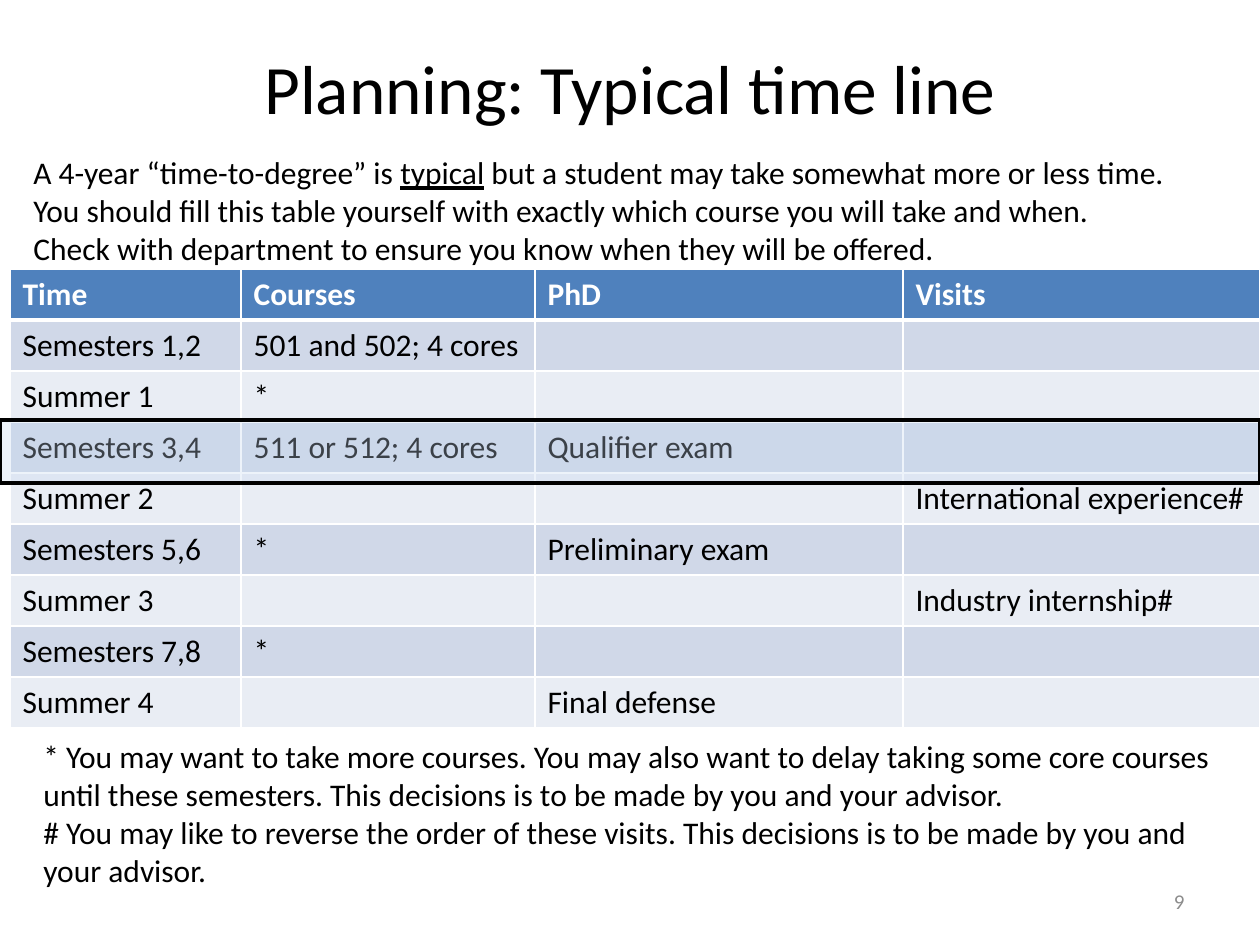
"""Build the slide with the typical time line of a doctorate."""
from dataclasses import dataclass

from lxml.etree import SubElement
from pptx import Presentation
from pptx.dml.color import RGBColor as Rgb
from pptx.enum.shapes import MSO_SHAPE as Shape
from pptx.enum.text import MSO_ANCHOR as Anchor, PP_ALIGN as Align
from pptx.oxml.ns import qn
from pptx.util import Emu, Pt

EMU_PER_PX = 914400 / 126


@dataclass(frozen=True)
class Theme:
    font: str = "Calibri"
    title_size: float = 39.6
    body_size: int = 18
    number_size: int = 12
    text: str = "000000"
    muted: str = "8C8C8C"
    white: str = "FFFFFF"
    header: str = "4F81BD"
    bands: tuple = ("D0D8E8", "E9EDF4")
    highlight: str = "C6D9F1"
    highlight_opacity: int = 30


THEME = Theme()

COLUMN_WIDTHS = (231, 294, 368, 357)
ROW_HEIGHT = 51
ROWS = (
    ("Time", "Courses", "PhD", "Visits"),
    ("Semesters 1,2", "501 and 502; 4 cores", "", ""),
    ("Summer 1", "*", "", ""),
    ("Semesters 3,4", "511 or 512; 4 cores", "Qualifier exam", ""),
    ("Summer 2", "", "", "International experience#"),
    ("Semesters 5,6", "*", "Preliminary exam", ""),
    ("Summer 3", "", "", "Industry internship#"),
    ("Semesters 7,8", "*", "", ""),
    ("Summer 4", "", "Final defense", ""),
)
INTRO = (
    ("A 4-year “time-to-degree” is ", "typical",
     " but a student may take somewhat more or less time."),
    ("You should fill this table yourself with exactly which course you will take and when.",),
    ("Check with department to ensure you know when they will be offered.",),
)
NOTES = (
    ("* You may want to take more courses. You may also want to delay taking some core "
     "courses until these semesters. This decisions is to be made by you and your advisor.",),
    ("# You may like to reverse the order of these visits. This decisions is to be made "
     "by you and your advisor.",),
)


def px(length):
    return Emu(round(length * EMU_PER_PX))


def style(paragraph, size, color=THEME.text, align=Align.LEFT, bold=False):
    font = paragraph.font
    font.name, font.size, font.bold = THEME.font, Pt(size), bold
    font.color.rgb = Rgb.from_string(color)
    paragraph.alignment = align


def add_title(slide, text, left, top, width, height):
    title = slide.shapes.title
    title.left, title.top, title.width, title.height = map(px, (left, top, width, height))
    title.text_frame.text = text
    title.text_frame.vertical_anchor = Anchor.MIDDLE
    style(title.text_frame.paragraphs[0], THEME.title_size, align=Align.CENTER)


def add_text(slide, paragraphs, box, size=THEME.body_size, color=THEME.text,
             align=Align.LEFT, anchor=Anchor.TOP):
    """Add a text box; every second run of a paragraph is underlined."""
    frame = slide.shapes.add_textbox(*map(px, box)).text_frame
    frame.word_wrap = True
    frame.vertical_anchor = anchor
    for index, runs in enumerate(paragraphs):
        paragraph = frame.add_paragraph() if index else frame.paragraphs[0]
        style(paragraph, size, color, align)
        for position, text in enumerate(runs):
            run = paragraph.add_run()
            run.text = text
            if position % 2:
                run.font.underline = True


def set_borders(cell, widths):
    properties = cell._tc.get_or_add_tcPr()
    for side, width in zip("LRTB", widths):
        line = SubElement(properties, qn(f"a:ln{side}"), w=str(Pt(width)))
        fill = SubElement(line, qn("a:solidFill"))
        SubElement(fill, qn("a:srgbClr"), val=THEME.white)


def add_timeline(slide, left, top):
    table = slide.shapes.add_table(
        len(ROWS), len(COLUMN_WIDTHS), px(left), px(top),
        px(sum(COLUMN_WIDTHS)), px(ROW_HEIGHT * len(ROWS))).table
    for column, width in zip(table.columns, COLUMN_WIDTHS):
        column.width = px(width)
    for index, (row, texts) in enumerate(zip(table.rows, ROWS)):
        row.height = px(ROW_HEIGHT)
        is_header = index == 0
        fill = THEME.header if is_header else THEME.bands[(index - 1) % 2]
        for cell, text in zip(row.cells, texts):
            cell.text = text
            style(cell.text_frame.paragraphs[0], THEME.body_size,
                  THEME.white if is_header else THEME.text, bold=is_header)
            set_borders(cell, (1, 1, 3 if index == 1 else 1, 3 if is_header else 1))
            cell.fill.solid()
            cell.fill.fore_color.rgb = Rgb.from_string(fill)


def add_highlight(slide, left, top, width, height):
    shape = slide.shapes.add_shape(Shape.RECTANGLE, *map(px, (left, top, width, height)))
    shape.shadow.inherit = False
    shape.fill.solid()
    shape.fill.fore_color.rgb = Rgb.from_string(THEME.highlight)
    color = shape._element.spPr.find(f"{qn('a:solidFill')}/{qn('a:srgbClr')}")
    SubElement(color, qn("a:alpha"), val=str(THEME.highlight_opacity * 1000))
    shape.line.color.rgb = Rgb.from_string(THEME.text)
    shape.line.width = Pt(2)


def main():
    presentation = Presentation()
    presentation.slide_width, presentation.slide_height = px(1260), px(945)
    slide = presentation.slides.add_slide(presentation.slide_layouts[5])
    add_title(slide, "Planning: Typical time line", 63, 38, 1134, 98)
    add_text(slide, (("9",),), (903, 876, 294, 50), THEME.number_size, THEME.muted,
             Align.RIGHT, Anchor.MIDDLE)
    add_timeline(slide, 10, 269)
    add_text(slide, NOTES, (31, 731, 1197, 165))
    add_text(slide, INTRO, (21, 147, 1229, 127))
    add_highlight(slide, 0, 420, 1260, 63)
    presentation.save("out.pptx")


if __name__ == "__main__":
    main()
